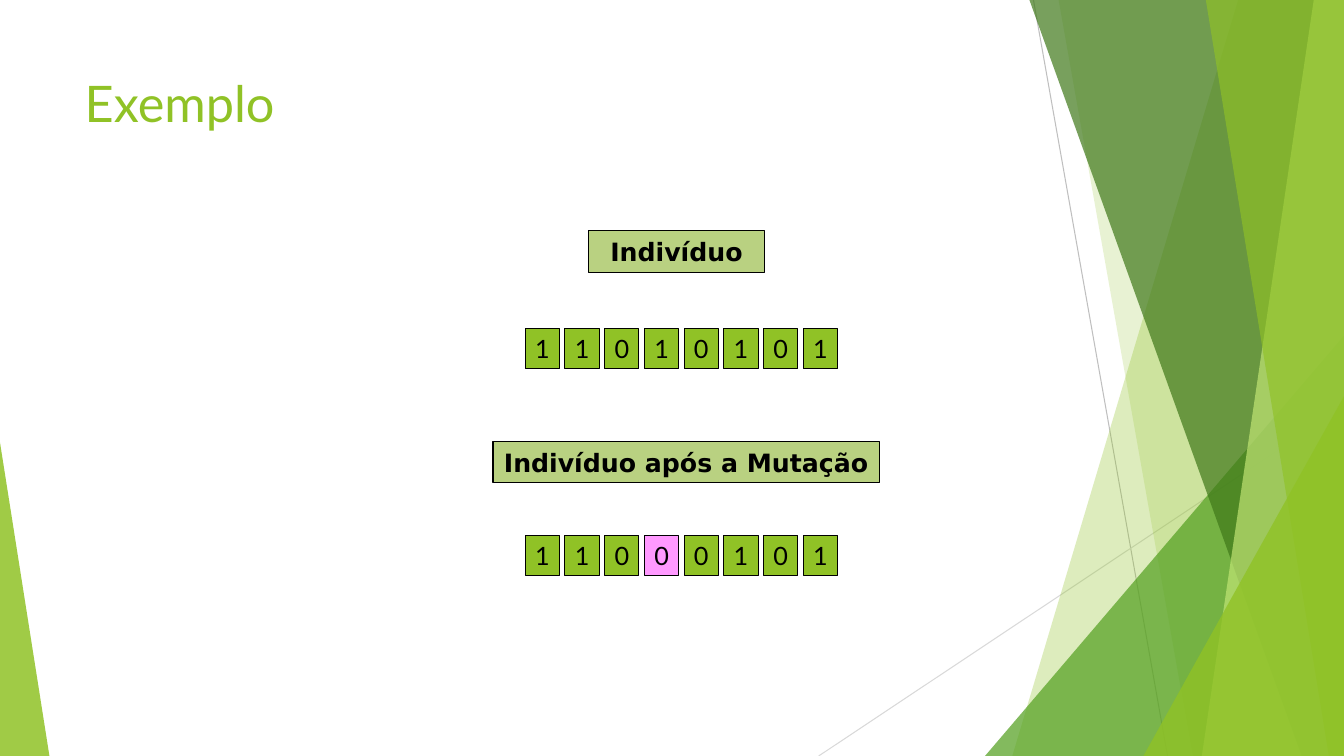
from lxml import etree
from pptx import Presentation
from pptx.dml.color import RGBColor
from pptx.enum import shapes, text
from pptx.oxml import ns
from pptx.util import Inches, Pt

WIDTH, HEIGHT = 13.33, 7.5

GREEN = RGBColor(0x90, 0xC2, 0x26)
MID_GREEN = RGBColor(0x54, 0xA0, 0x21)
DARK_GREEN = RGBColor(0x3F, 0x78, 0x19)
LIME = RGBColor(0xC0, 0xE4, 0x74)
LABEL_GREEN = RGBColor(0xB9, 0xD1, 0x81)
PINK = RGBColor(0xFF, 0x99, 0xFF)
BLACK = RGBColor(0, 0, 0)
GREY = RGBColor(0xBF, 0xBF, 0xBF)
LIGHT_GREY = RGBColor(0xD9, 0xD9, 0xD9)

GENE_WIDTH, GENE_HEIGHT, GENE_STEP = 0.34, 0.4, 0.394


def write(frame, words, font="Lato", size=18, color=BLACK, bold=False,
          align=text.PP_ALIGN.CENTER, anchor=text.MSO_ANCHOR.MIDDLE, wrap=False):
    frame.word_wrap = wrap
    frame.vertical_anchor = anchor
    para = frame.paragraphs[0]
    para.alignment = align
    span = para.add_run()
    span.text = words
    span.font.name = font
    span.font.size = Pt(size)
    span.font.bold = bold
    span.font.color.rgb = color


def tint(shape, color, opacity):
    """Fill a borderless shape; opacity is a percentage."""
    shape.shadow.inherit = False
    shape.line.fill.background()
    shape.fill.solid()
    shape.fill.fore_color.rgb = color
    color_node = shape.fill._xPr.find(ns.qn("a:solidFill"))[0]
    etree.SubElement(color_node, ns.qn("a:alpha"), val=str(opacity * 1000))


def add_line(page, start, end, color):
    line = page.shapes.add_connector(shapes.MSO_CONNECTOR.STRAIGHT,
                                     *map(Inches, start + end))
    line.line.color.rgb = color
    line.line.width = Pt(0.75)
    etree.SubElement(line._element.spPr, ns.qn("a:effectLst"))


def add_band(page, top_x, bottom_x, color, opacity):
    """Full-height band from a slanted left edge to the slide's right edge."""
    right, bottom = Inches(WIDTH), Inches(HEIGHT)
    builder = page.shapes.build_freeform(Inches(top_x), 0)
    builder.add_line_segments(
        [(right, 0), (right, bottom), (Inches(bottom_x), bottom)], close=True)
    tint(builder.convert_to_shape(), color, opacity)


def add_corner(page, left, top, width, apex, color, opacity):
    """Triangle standing on the slide's bottom edge; apex 0 is left, 1 right."""
    corner = page.shapes.add_shape(
        shapes.MSO_SHAPE.ISOSCELES_TRIANGLE,
        *map(Inches, (left, top, width, HEIGHT - top)))
    corner.adjustments[0] = apex
    tint(corner, color, opacity)


def add_backdrop(page):
    add_line(page, (10.25, 0), (11.58, HEIGHT), GREY)
    add_line(page, (WIDTH, 4.03), (8.12, HEIGHT), LIGHT_GREY)
    add_band(page, 12.28, 10.04, GREEN, 30)
    add_band(page, 10.5, 11.83, GREEN, 20)
    add_corner(page, 9.77, 3.33, 3.56, 1, MID_GREEN, 72)
    add_band(page, 10.21, 12.91, DARK_GREEN, 70)
    add_band(page, 13.03, 11.92, LIME, 70)
    add_band(page, 11.96, 13.18, GREEN, 65)
    add_corner(page, 11.34, 3.93, 1.99, 1, GREEN, 80)
    add_corner(page, 0, 4.39, 0.49, 0, GREEN, 85)


def add_title(page, words, box):
    title = page.shapes.title
    title.left, title.top, title.width, title.height = map(Inches, box)
    write(title.text_frame, words, size=36, color=GREEN, wrap=True,
          align=text.PP_ALIGN.LEFT, anchor=text.MSO_ANCHOR.TOP)


def add_box(page, words, box, fill, **text_format):
    shape = page.shapes.add_shape(shapes.MSO_SHAPE.RECTANGLE, *map(Inches, box))
    shape.shadow.inherit = False
    shape.fill.solid()
    shape.fill.fore_color.rgb = fill
    shape.line.color.rgb = BLACK
    shape.line.width = Pt(0.75)
    write(shape.text_frame, words, **text_format)


def add_label(page, words, box):
    add_box(page, words, box, LABEL_GREEN, font="DejaVu Sans", bold=True)


def add_chromosome(page, genes, left, top, mutated=None):
    for index, gene in enumerate(genes):
        box = (left + index * GENE_STEP, top, GENE_WIDTH, GENE_HEIGHT)
        add_box(page, gene, box, PINK if index == mutated else GREEN)


def main():
    deck = Presentation()
    deck.slide_width, deck.slide_height = Inches(WIDTH), Inches(HEIGHT)
    page = deck.slides.add_slide(deck.slide_layouts.get_by_name("Title Only"))
    add_backdrop(page)
    add_title(page, "Exemplo", (0.74, 0.67, 9.4, 1.44))
    add_label(page, "Indivíduo", (5.84, 2.29, 1.74, 0.41))
    add_chromosome(page, "11010101", 5.21, 3.26)
    add_label(page, "Indivíduo após a Mutação", (4.89, 4.38, 3.83, 0.41))
    add_chromosome(page, "11000101", 5.21, 5.31, mutated=3)
    deck.save("out.pptx")


if __name__ == "__main__":
    main()
